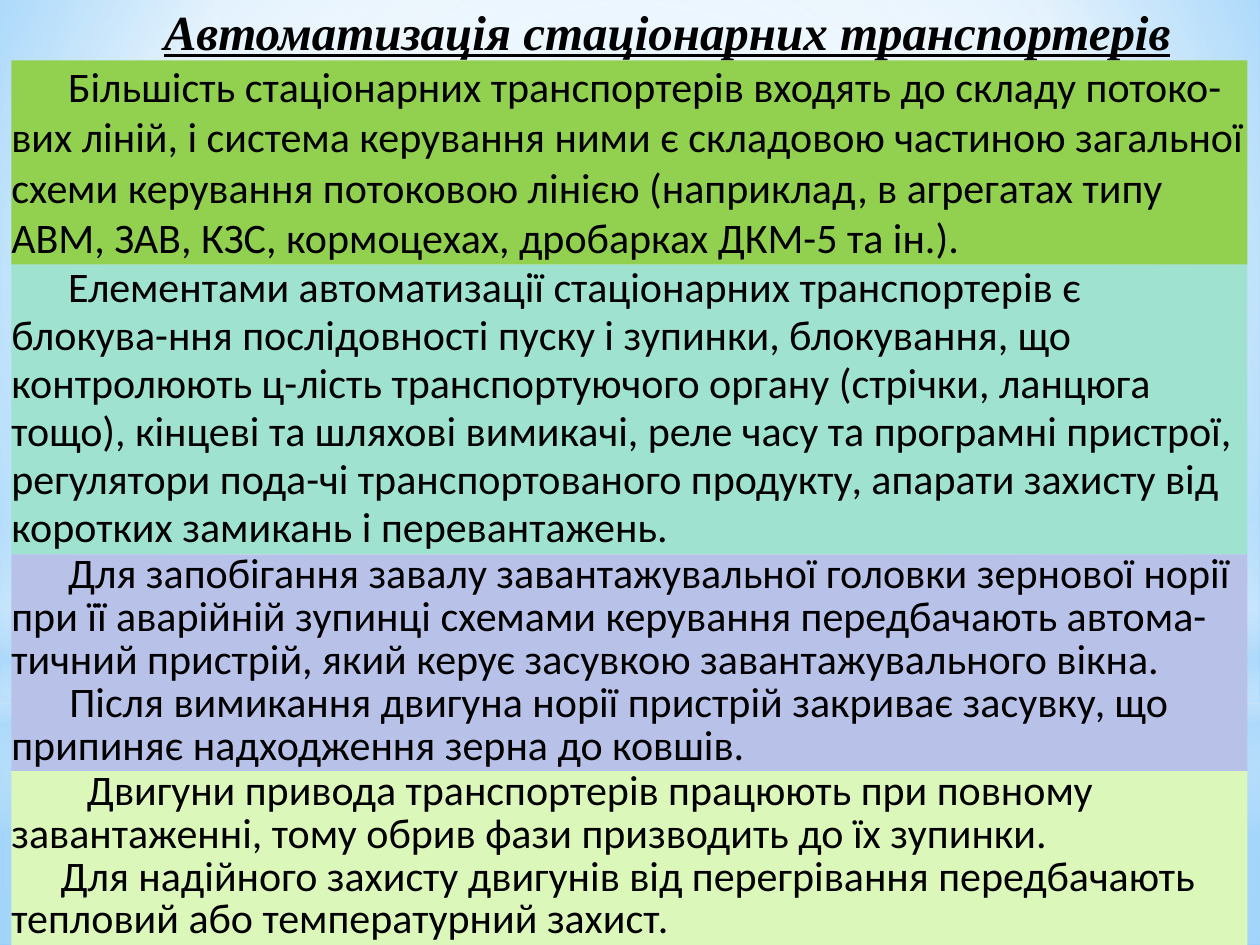
from lxml import etree
from pptx import Presentation
from pptx.dml.color import RGBColor
from pptx.enum.shapes import MSO_SHAPE as SHAPE
from pptx.enum.text import MSO_ANCHOR as ANCHOR, MSO_AUTO_SIZE as AUTO, PP_ALIGN as ALIGN
from pptx.oxml.ns import qn
from pptx.util import Inches, Pt

BLACK = RGBColor(0x00, 0x00, 0x00)
WHITE = RGBColor(0xFF, 0xFF, 0xFF)
PALE = RGBColor(0xB4, 0xDC, 0xFA)
SKY = RGBColor(0x9E, 0xD5, 0xFF)
BLUE = RGBColor(0x5B, 0xB9, 0xFF)
GREEN = RGBColor(0x92, 0xD0, 0x50)
MINT = RGBColor(0x9E, 0xE2, 0xCF)
LILAC = RGBColor(0xB8, 0xC2, 0xE9)
LIME = RGBColor(0xDC, 0xF7, 0xBA)
CENTER = (50, 50, 50, 50)

# Bands: height, colour, line spacing, [(first-line indent, text)]
BANDS = [
    (1.62, GREEN, 1.0, [
        (0.45, "Більшість стаціонарних транспортерів входять до складу потоко-вих ліній, "
               "і система керування ними є складовою частиною загальної схеми керування "
               "потоковою лінією (наприклад, в агрегатах типу АВМ, ЗАВ, КЗС, кормоцехах, "
               "дробарках ДКМ-5 та ін.).")]),
    (2.3, MINT, 0.95, [
        (0.45, "Елементами автоматизації стаціонарних транспортерів є блокува-ння "
               "послідовності пуску і зупинки, блокування, що контролюють ц-лість "
               "транспортуючого органу (стрічки, ланцюга тощо), кінцеві та шляхові "
               "вимикачі, реле часу та програмні пристрої, регулятори пода-чі "
               "транспортованого продукту, апарати захисту від коротких замикань "
               "і перевантажень.")]),
    (1.72, LILAC, 0.85, [
        (0.45, "Для запобігання завалу завантажувальної головки зернової норії при її "
               "аварійній зупинці схемами керування передбачають автома-тичний пристрій, "
               "який керує засувкою завантажувального вікна."),
        (0.46, "Після вимикання двигуна норії пристрій закриває засувку, що припиняє "
               "надходження зерна до ковшів.")]),
    (1.38, LIME, 0.85, [
        (0.6, "Двигуни привода транспортерів працюють при повному завантаженні, тому "
              "обрив фази призводить до їх зупинки."),
        (0.39, "Для надійного захисту двигунів від перегрівання передбачають тепловий "
               "або температурний захист.")]),
]


def add_text(p, text, font="Calibri", size=24, bold=False, italic=False,
             underline=False, spacing=1.0, indent=0):
    p.alignment = ALIGN.LEFT
    p.line_spacing = spacing
    if indent:
        pPr = p._p.get_or_add_pPr()
        pPr.set("marL", "0")
        pPr.set("indent", str(Inches(indent)))
    r = p.add_run()
    r.text = text
    f = r.font
    f.name, f.size, f.color.rgb = font, Pt(size), BLACK
    f.bold, f.italic, f.underline = bold, italic, underline


def gradient(stops, center=None):
    """Stops are (position, colour, opacity); without a centre it runs downwards."""
    grad = etree.Element(qn("a:gradFill"), rotWithShape="1")
    gs_list = etree.SubElement(grad, qn("a:gsLst"))
    for pos, color, opacity in stops:
        gs = etree.SubElement(gs_list, qn("a:gs"), pos=str(pos * 1000))
        clr = etree.SubElement(gs, qn("a:srgbClr"), val=str(color))
        if opacity < 100:
            etree.SubElement(clr, qn("a:alpha"), val=str(opacity * 1000))
    if center:
        circle = etree.SubElement(grad, qn("a:path"), path="circle")
        sides = {k: str(v * 1000) for k, v in zip("ltrb", center)}
        etree.SubElement(circle, qn("a:fillToRect"), **sides)
    else:
        etree.SubElement(grad, qn("a:lin"), ang=str(90 * 60000), scaled="0")
    return grad


class SlideBuilder:
    band_left, band_width = 0.09, 9.81

    def __init__(self, prs):
        self.s = prs.slides.add_slide(prs.slide_layouts[5])

    def background(self, stops, center):
        self.s.background.fill.solid()
        bg = self.s.element.find(".//" + qn("p:bgPr"))
        bg.replace(bg.find(qn("a:solidFill")), gradient(stops, center))

    def shape(self, kind, left, top, width, height):
        sp = self.s.shapes.add_shape(kind, Inches(left), Inches(top),
                                     Inches(width), Inches(height))
        sp.shadow.inherit = False
        sp.line.fill.background()
        return sp

    def glow(self, top, height, stops, center=None, kind=SHAPE.RECTANGLE):
        sp = self.shape(kind, 0, top, 10, height)
        sp.fill.background()
        spPr = sp.element.spPr
        spPr.replace(spPr.find(qn("a:noFill")), gradient(stops, center))

    def frame(self, sp, wrap):
        tf = sp.text_frame
        tf.margin_left = tf.margin_top = tf.margin_right = tf.margin_bottom = 0
        tf.vertical_anchor = ANCHOR.TOP
        tf.word_wrap = wrap
        tf.auto_size = AUTO.SHAPE_TO_FIT_TEXT
        return tf

    def title(self, text):
        sp = self.s.shapes.title
        sp.left, sp.top = Inches(1.3), Inches(0.01)
        sp.width, sp.height = Inches(8.07), Inches(0.47)
        sp.element.getparent().append(sp.element)  # in front of the backdrop
        add_text(self.frame(sp, False).paragraphs[0], text, font="Times New Roman",
                 size=28, bold=True, italic=True, underline=True)

    def band(self, top, height, color, spacing, paragraphs):
        sp = self.shape(SHAPE.RECTANGLE, self.band_left, top, self.band_width, height)
        sp.fill.solid()
        sp.fill.fore_color.rgb = color
        tf = self.frame(sp, True)
        for i, (indent, text) in enumerate(paragraphs):
            p = tf.add_paragraph() if i else tf.paragraphs[0]
            add_text(p, text, spacing=spacing, indent=indent)


def main():
    prs = Presentation()
    prs.slide_width, prs.slide_height = Inches(10), Inches(7.5)
    b = SlideBuilder(prs)

    # Sky backdrop
    b.background([(0, SKY, 100), (60, WHITE, 100), (100, BLUE, 100)], (20, 10, 20, 60))
    b.glow(5.58, 1.92, [(0, WHITE, 91), (37, WHITE, 76), (100, PALE, 79)], CENTER)
    b.glow(0, 5.58, [(0, WHITE, 89), (48, WHITE, 62), (100, PALE, 79)], CENTER)
    b.glow(4.12, 2.5, [(0, WHITE, 0), (29, WHITE, 30), (45, PALE, 40),
                       (55, WHITE, 26), (65, PALE, 60), (100, WHITE, 0)])
    b.glow(1.75, 5.58, [(0, WHITE, 100), (56, WHITE, 0)], CENTER, SHAPE.OVAL)

    # Title and stacked text bands
    b.title("Автоматизація стаціонарних транспортерів")
    top = 0.48
    for height, color, spacing, paragraphs in BANDS:
        b.band(top, height, color, spacing, paragraphs)
        top += height

    prs.save("out.pptx")


if __name__ == "__main__":
    main()
